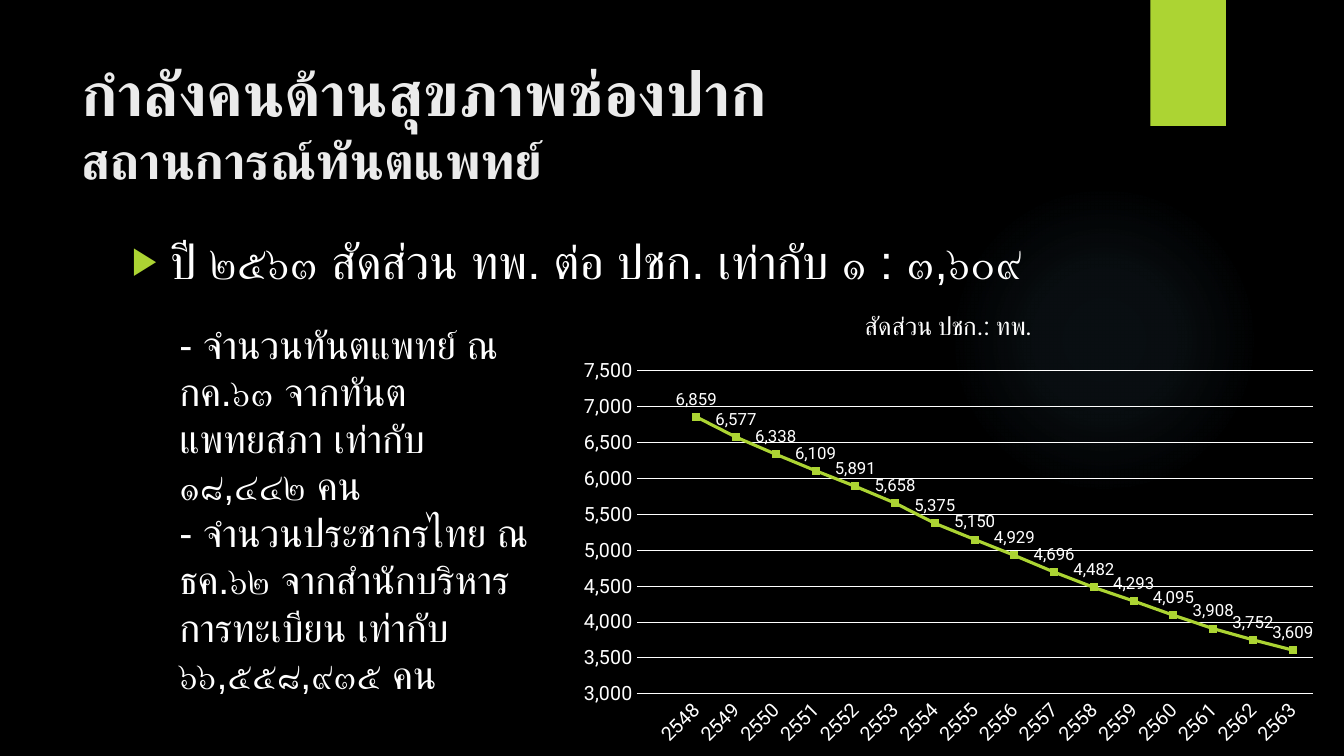
from lxml import etree
from pptx import Presentation
from pptx.chart.data import CategoryChartData
from pptx.dml.color import RGBColor
from pptx.enum.chart import XL_CHART_TYPE as ChartType, XL_LABEL_POSITION as LabelPosition, XL_TICK_MARK as TickMark
from pptx.enum.shapes import MSO_SHAPE as Preset
from pptx.enum.text import MSO_ANCHOR as Anchor
from pptx.oxml import parse_xml
from pptx.oxml.ns import nsdecls, qn
from pptx.util import Inches, Pt

COLORS = {"background": "000000", "accent": "ACD433", "title": "EBEBEB", "text": "FFFFFF", "glow": "7AC4F0"}
TEXT_FONT, CHART_FONT, LABEL_FONT = "Arial", "Quicksand", "Roboto"

TITLE = [("กำลังคนด้านสุขภาพช่องปาก", 44), ("สถานการณ์ทันตแพทย์", 36)]
HEADLINE = "ปี ๒๕๖๓ สัดส่วน ทพ. ต่อ ปชก. เท่ากับ ๑ : ๓,๖๐๙"
NOTES = [
    "- จำนวนทันตแพทย์ ณ กค.๖๓ จากทันตแพทยสภา เท่ากับ ๑๘,๔๔๒ คน",
    "- จำนวนประชากรไทย ณ ธค.๖๒ จากสำนักบริหารการทะเบียน เท่ากับ ๖๖,๕๕๘,๙๓๕ คน",
]
RATIO_NAME = "สัดส่วน ปชก.: ทพ."
FIRST_YEAR = 2548
RATIOS = [6859, 6577, 6338, 6109, 5891, 5658, 5375, 5150,
          4929, 4696, 4482, 4293, 4095, 3908, 3752, 3609]
GLOW_STOPS = [(0, 7), (36, 6), (69, 0)]

PLACES = {
    "glow": (9.41, 1.83, 3.08, 3.08),
    "tab": (11.41, 0, 0.75, 1.25),
    "title": (0.71, 0.5, 10.29, 1.53),
    "headline": (1.21, 2.25, 9.78, 0.8),
    "chart": (5.64, 2.88, 7.53, 4.62),
    "notes": (1.68, 3.13, 3.78, 3.23),
}


def color(name):
    return RGBColor.from_string(COLORS[name])


def place(name):
    return [Inches(length) for length in PLACES[name]]


def style_font(font, size, face, shade="text"):
    font.size = Pt(size)
    font.name = face
    font.color.rgb = color(shade)


def add_span(para, text, size, shade="text", bold=False):
    span = para.add_run()
    span.text = text
    style_font(span.font, size, TEXT_FONT, shade)
    span.font.bold = bold
    etree.SubElement(span.font._element, qn("a:cs"), typeface=TEXT_FONT)


def add_box(page, name):
    frame = page.shapes.add_textbox(*place(name)).text_frame
    frame.word_wrap = True
    frame.vertical_anchor = Anchor.TOP
    return frame


def add_block(page, preset, name):
    block = page.shapes.add_shape(preset, *place(name))
    block.shadow.inherit = False
    block.line.fill.background()
    block.fill.solid()
    block.fill.fore_color.rgb = color("accent")
    return block


def add_glow(page):
    glow = add_block(page, Preset.OVAL, "glow")
    stops = "".join(
        f'<a:gs pos="{position * 1000}"><a:srgbClr val="{COLORS["glow"]}">'
        f'<a:alpha val="{alpha * 1000}"/></a:srgbClr></a:gs>'
        for position, alpha in GLOW_STOPS)
    gradient = parse_xml(
        f'<a:gradFill {nsdecls("a")}><a:gsLst>{stops}</a:gsLst><a:path path="circle">'
        '<a:fillToRect l="50000" t="50000" r="50000" b="50000"/></a:path></a:gradFill>')
    properties = glow._element.spPr
    properties.replace(properties.find(qn("a:solidFill")), gradient)


def add_title(page):
    para = add_box(page, "title").paragraphs[0]
    for index, (text, size) in enumerate(TITLE):
        if index:
            para.add_line_break()
        add_span(para, text, size, "title", True)


def add_headline(page):
    para = add_box(page, "headline").paragraphs[0]
    properties = para._p.get_or_add_pPr()
    properties.set("marL", str(Inches(0.38)))
    properties.set("indent", str(-Inches(0.38)))
    bullet_color = etree.SubElement(properties, qn("a:buClr"))
    etree.SubElement(bullet_color, qn("a:srgbClr"), val=COLORS["accent"])
    etree.SubElement(properties, qn("a:buSzPct"), val="80000")
    etree.SubElement(properties, qn("a:buFont"), typeface=TEXT_FONT)
    etree.SubElement(properties, qn("a:buChar"), char="▶")
    add_span(para, HEADLINE, 34)


def add_notes(page):
    frame = add_box(page, "notes")
    for index, text in enumerate(NOTES):
        para = frame.add_paragraph() if index else frame.paragraphs[0]
        add_span(para, text, 28)


def add_ratio_chart(page):
    data = CategoryChartData(number_format="#,##0")
    data.categories = [""] + [str(FIRST_YEAR + step) for step in range(len(RATIOS))]
    data.add_series(RATIO_NAME, [None] + RATIOS)
    chart = page.shapes.add_chart(ChartType.LINE, *place("chart"), data).chart
    style_font(chart.font, 10, CHART_FONT)
    chart.has_legend = False
    chart.has_title = True
    span = chart.chart_title.text_frame.paragraphs[0].add_run()
    span.text = RATIO_NAME
    style_font(span.font, 18, LABEL_FONT)
    span.font.bold = False

    years, scale = chart.category_axis, chart.value_axis
    for axis in (years, scale):
        axis.major_tick_mark = axis.minor_tick_mark = TickMark.NONE
        style_font(axis.tick_labels.font, 14, LABEL_FONT)
    years._element.find(qn("c:txPr")).find(qn("a:bodyPr")).set("rot", "-2700000")
    scale.minimum_scale, scale.maximum_scale, scale.major_unit = 3000, 7500, 500
    scale.tick_labels.number_format = "#,##0"
    scale.tick_labels.number_format_is_linked = False
    scale.format.line.fill.background()
    for line in (years.format.line, scale.major_gridlines.format.line):
        line.color.rgb = color("text")
        line.width = Pt(0.75)

    plot = chart.plots[0]
    plot.vary_by_categories = False
    series = plot.series[0]
    series.smooth = False
    series.marker.style = None
    series.format.line.color.rgb = color("accent")
    series.format.line.width = Pt(2.25)
    labels = series.data_labels
    labels.show_value = True
    labels.position = LabelPosition.ABOVE
    labels.number_format = "#,##0"
    labels.number_format_is_linked = False
    style_font(labels.font, 12, LABEL_FONT)


def main():
    deck = Presentation()
    deck.slide_width, deck.slide_height = Inches(13.33), Inches(7.5)
    page = deck.slides.add_slide(deck.slide_layouts[6])
    page.background.fill.solid()
    page.background.fill.fore_color.rgb = color("background")
    add_glow(page)
    add_block(page, Preset.RECTANGLE, "tab")
    add_title(page)
    add_headline(page)
    add_ratio_chart(page)
    add_notes(page)
    deck.save("out.pptx")


if __name__ == "__main__":
    main()
